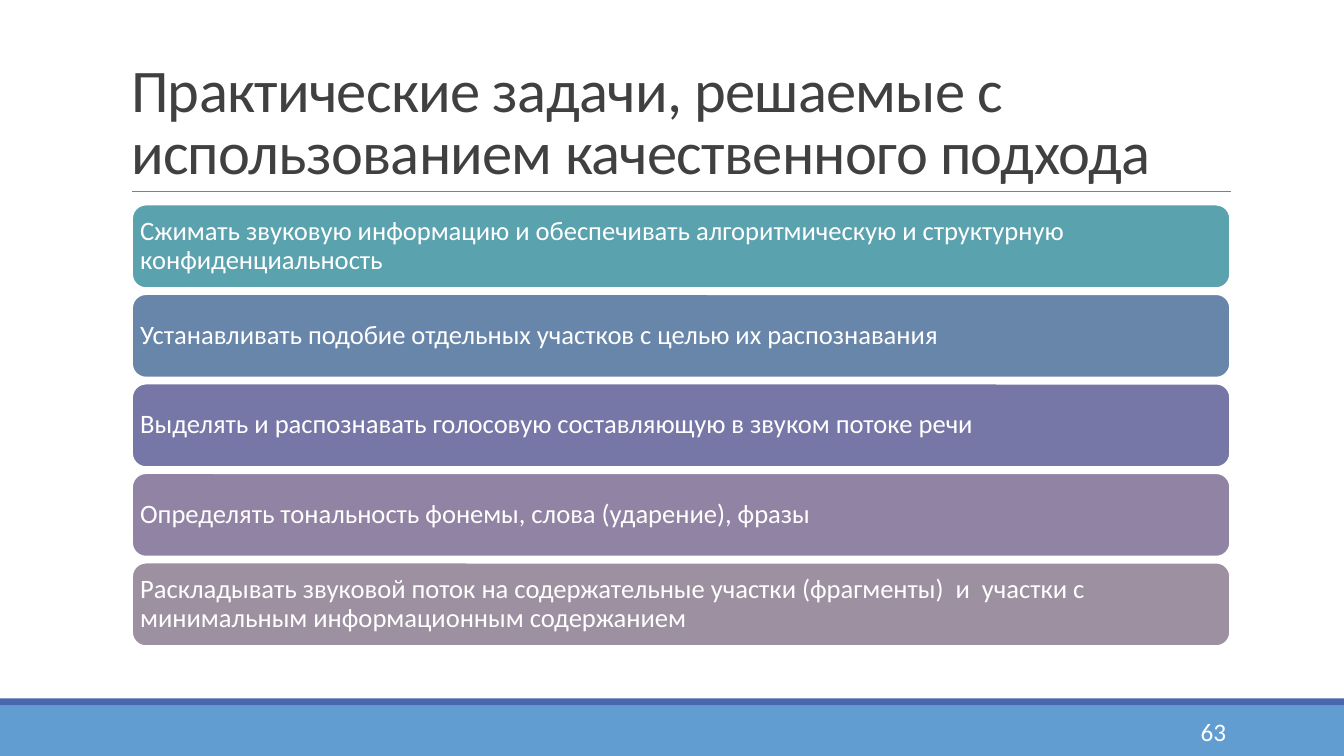
from pptx import Presentation
from pptx.dml.color import RGBColor
from pptx.enum.shapes import MSO_CONNECTOR, MSO_SHAPE
from pptx.enum.text import MSO_ANCHOR, MSO_AUTO_SIZE, PP_ALIGN
from pptx.oxml.ns import qn
from pptx.util import Inches, Pt
from lxml.etree import SubElement

FONT = "Calibri"
WHITE = "FFFFFF"
SLIDE_WIDTH, SLIDE_HEIGHT = 13.33, 7.5

TITLE = "Практические задачи, решаемые с использованием качественного подхода"
TASKS = [
    ("Сжимать звуковую информацию и обеспечивать алгоритмическую и структурную конфиденциальность", "5AA2AE"),
    ("Устанавливать подобие отдельных участков с целью их распознавания", "6885AA"),
    ("Выделять и распознавать голосовую составляющую в звуком потоке речи", "7677A6"),
    ("Определять тональность фонемы, слова (ударение), фразы", "9083A3"),
    ("Раскладывать звуковой поток на содержательные участки (фрагменты)  и  участки с "
     "минимальным информационным содержанием", "9D90A0"),
]


def color(value):
    return RGBColor.from_string(value)


def write_text(shape, text, size, fill=WHITE, align=PP_ALIGN.LEFT, anchor=MSO_ANCHOR.MIDDLE,
               line_spacing=1.0, letter_spacing=None, inset_x=0.1, inset_y=0.05):
    """Put one formatted paragraph into the shape; letter_spacing is in points."""
    frame = shape.text_frame
    frame.word_wrap = True
    frame.auto_size = MSO_AUTO_SIZE.NONE
    frame.vertical_anchor = anchor
    frame.margin_left = frame.margin_right = Inches(inset_x)
    frame.margin_top = frame.margin_bottom = Inches(inset_y)
    paragraph = frame.paragraphs[0]
    paragraph.alignment = align
    paragraph.line_spacing = line_spacing
    run = paragraph.add_run()
    run.text = text
    run.font.name = FONT
    run.font.size = Pt(size)
    run.font.color.rgb = color(fill)
    if letter_spacing is not None:
        run._r.get_or_add_rPr().set("spc", str(round(letter_spacing * 100)))


def add_box(slide, kind, left, top, width, height, fill, outline=None):
    shape = slide.shapes.add_shape(kind, Inches(left), Inches(top), Inches(width), Inches(height))
    shape.shadow.inherit = False
    shape.fill.solid()
    shape.fill.fore_color.rgb = color(fill)
    if outline:
        shape.line.color.rgb = color(outline)
        shape.line.width = Pt(1.25)
    else:
        shape.line.fill.background()
    return shape


def add_title(slide, left, top, width, height):
    """Fill the title placeholder and rule a thin line along its lower edge."""
    title = slide.shapes.title
    title.left, title.top = Inches(left), Inches(top)
    title.width, title.height = Inches(width), Inches(height)
    write_text(title, TITLE, 43.2, fill="404040", anchor=MSO_ANCHOR.BOTTOM,
               line_spacing=0.85, letter_spacing=-0.5)
    bottom = Inches(top + height)
    rule = slide.shapes.add_connector(MSO_CONNECTOR.STRAIGHT, Inches(left + 0.11), bottom,
                                      Inches(left + width + 0.01), bottom)
    rule.line.color.rgb = color("808080")
    rule.line.width = Pt(0.5)
    SubElement(rule._element.spPr, qn("a:effectLst"))


def add_task_list(slide, left, top, width, height, gap=0.06):
    """Stack the tasks as equal rounded bars that fill the box."""
    bar_height = (height + gap) / len(TASKS) - gap
    for index, (task, fill) in enumerate(TASKS):
        bar = add_box(slide, MSO_SHAPE.ROUNDED_RECTANGLE, left, top + index * (bar_height + gap),
                      width, bar_height, fill, outline=WHITE)
        write_text(bar, task, 19, line_spacing=0.9, inset_x=0.04, inset_y=0.04)


def add_footer(slide, left, top, width, height, number):
    """Draw the footer band, its dark stripe and the slide number."""
    stripe = 0.07
    add_box(slide, MSO_SHAPE.RECTANGLE, left, top + stripe, width, height - stripe, "629DD1")
    add_box(slide, MSO_SHAPE.RECTANGLE, left, top, width, stripe, "4A66AC")
    number_box = slide.shapes.add_textbox(Inches(left + width - 2.5), Inches(top + 0.13),
                                          Inches(1.43), Inches(0.4))
    write_text(number_box, number, 18, align=PP_ALIGN.RIGHT)


def main():
    presentation = Presentation()
    presentation.slide_width = Inches(SLIDE_WIDTH)
    presentation.slide_height = Inches(SLIDE_HEIGHT)
    slide = presentation.slides.add_slide(presentation.slide_layouts.get_by_name("Title Only"))
    add_footer(slide, 0, 6.93, SLIDE_WIDTH, 0.57, "63")
    add_title(slide, 1.2, 0.31, 11, 1.59)
    add_task_list(slide, 1.31, 2.03, 10.89, 4.38)
    presentation.save("out.pptx")


if __name__ == "__main__":
    main()
